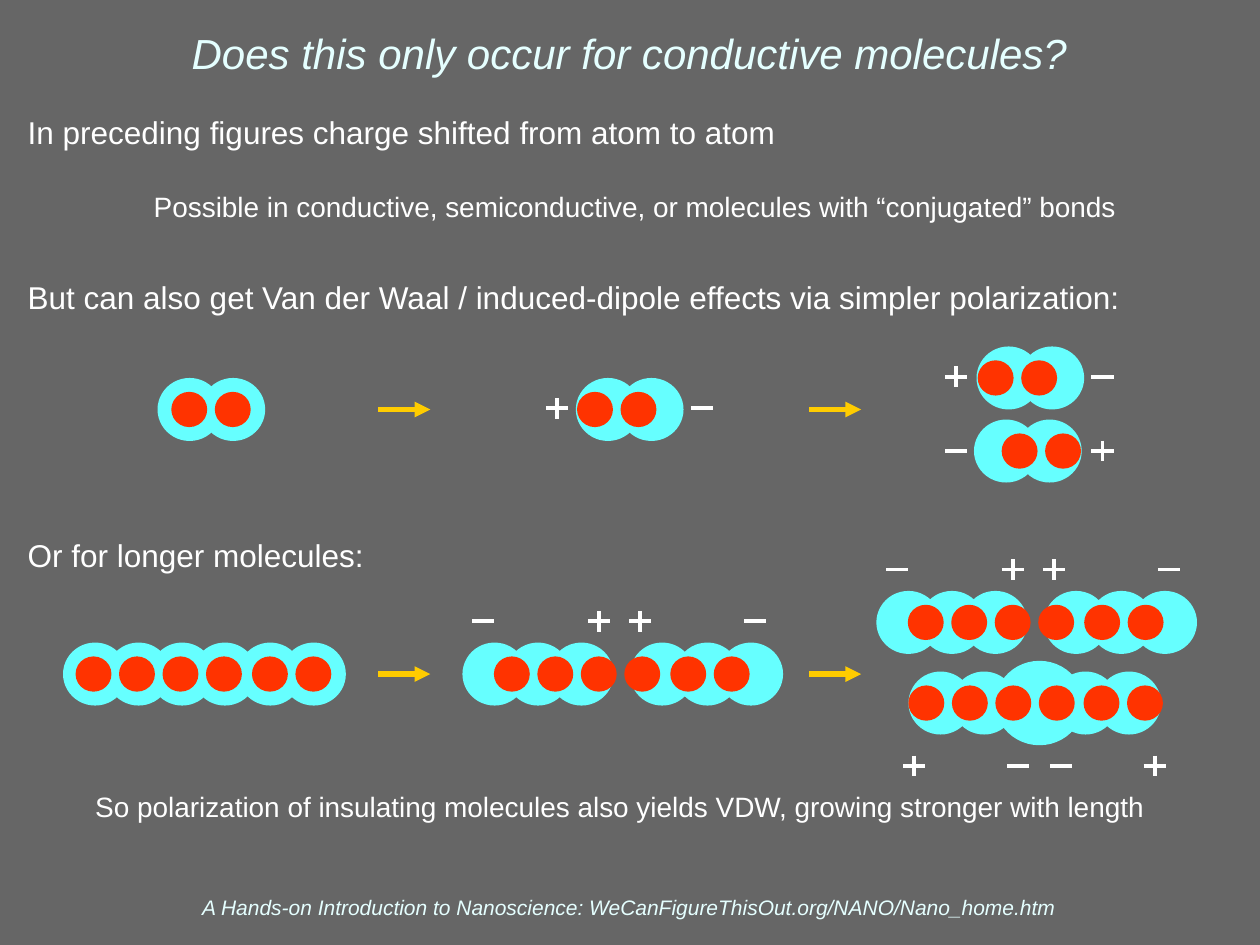
"""Draw a slide on induced dipoles in short and long insulating molecules."""
from dataclasses import dataclass

from lxml import etree
from pptx import Presentation
from pptx.dml import color
from pptx.enum import shapes, text
from pptx.oxml import ns
from pptx.util import Inches, Pt

HEX = {"back": "666666", "pale": "E5FFFF", "text": "FFFFFF",
       "cloud": "66FFFF", "core": "FF3300", "arrow": "FFCC00"}
COLS, ROWS = 100, 75
PITCH = 3.45
CLOUD, CORE, BULGE = (5.1, 5.0), (2.85, 2.8), (7.0, 6.7)
SIGN = (1.75, 1.65)
HEAD = {"size": Pt(24), "italic": True}
FOOT = {"size": Pt(12), "italic": True}

prs = Presentation()
prs.slide_width, prs.slide_height = Inches(10), Inches(7.5)
slide = prs.slides.add_slide(prs.slide_layouts[1])


@dataclass
class Line:
    """A body paragraph: words, point size, gap above, indent and alignment."""
    words: str
    size: int = 18
    gap: float = 0
    inset: float = 0
    align: int = text.PP_ALIGN.LEFT


@dataclass
class Chain:
    """A molecule: runs of (left, count) on a row, with charge signs."""
    row: float
    clouds: list
    cores: list
    plus: tuple = ()
    minus: tuple = ()
    level: float = 0
    bulge: tuple = ()


LINES = [
    Line("In preceding figures charge shifted from atom to atom"),
    Line("Possible in conductive, semiconductive, or molecules with “conjugated” bonds",
         16, 22, 1),
    Line("But can also get Van der Waal / induced-dipole effects via simpler polarization:",
         gap=31.5),
    Line("Or for longer molecules:", gap=125.5),
    Line("So polarization of insulating molecules also yields VDW, growing stronger with length",
         16, 123.5, align=text.PP_ALIGN.CENTER),
]


def pair(row: float, cloud: float, core: float, **signs) -> Chain:
    """Describe a molecule of two atoms."""
    return Chain(row, [(cloud, 2)], [(core, 2)], **signs)


def split(left: float, row: float) -> Chain:
    """Describe two long molecules whose facing ends are positive."""
    return Chain(row, [(left, 3), (left + 13.3, 1), (left + 16.9, 2)],
                 [(left + 2.5, 4), (left + 16.5, 2)],
                 (left + 10.85, left + 14.1), (left + 1.65, left + 23.25),
                 row - 4.2)


CHAINS = [
    pair(32.5, 12.5, 13.6),
    pair(32.5, 45.7, 45.8, plus=(44.2,), minus=(55.7,), level=32.4),
    pair(30, 77.5, 77.6, plus=(75.9,), minus=(87.5,), level=29.9),
    pair(35.8, 77.3, 79.5, plus=(87.5,), minus=(75.9,), level=35.8),
    Chain(53.5, [(5, 3), (15.3, 1), (18.9, 2)], [(6, 4), (20, 2)]),
    split(36.7, 53.5),
    split(69.55, 49.4),
    Chain(55.8, [(72.1, 2), (83.6, 2)], [(72.1, 4), (86, 2)],
          (72.55, 91.65), (80.8, 84.2), 60.8, (79,)),
]


def col(num: float) -> int:
    """Turn grid columns into a length."""
    return round(prs.slide_width * num / COLS)


def row(num: float) -> int:
    """Turn grid rows into a length."""
    return round(prs.slide_height * num / ROWS)


def tint(hue: str) -> color.RGBColor:
    """Look up a named colour."""
    return color.RGBColor.from_string(HEX[hue])


def style(item, form: dict) -> None:
    """Set each format value on an item."""
    for key, val in form.items():
        setattr(item, key, val)


def place(box, left: float, top: float, wide: float, high: float, anchor) -> None:
    """Move a text shape on the grid and set its frame."""
    style(box, {"left": col(left), "top": row(top),
                "width": col(wide), "height": row(high)})
    edge = Inches(0.05)
    style(box.text_frame, {
        "word_wrap": True, "auto_size": text.MSO_AUTO_SIZE.NONE,
        "vertical_anchor": anchor, "margin_left": edge, "margin_right": edge,
        "margin_top": edge, "margin_bottom": edge})


def write(para, words: str, hue: str, form: dict, align=text.PP_ALIGN.CENTER) -> None:
    """Fill a paragraph with one formatted run."""
    run = para.add_run()
    run.text = words
    style(run.font, {"name": "Arial", **form})
    run.font.color.rgb = tint(hue)
    para.alignment = align


def fill(frame, lines: list[Line]) -> None:
    """Write the body lines without bullets."""
    for num, line in enumerate(lines):
        para = frame.add_paragraph() if num else frame.paragraphs[0]
        prop = para._p.get_or_add_pPr()
        prop.set("marL", str(Inches(line.inset)))
        prop.set("indent", "0")
        etree.SubElement(prop, ns.qn("a:buNone"))
        style(para, {"space_before": Pt(line.gap), "space_after": Pt(0),
                     "line_spacing": 1.0})
        write(para, line.words, "text", {"size": Pt(line.size)}, line.align)


def disc(left: float, mid: float, size: tuple, hue: str) -> None:
    """Draw an ellipse centred on a row."""
    wide, high = size
    oval = slide.shapes.add_shape(shapes.MSO_SHAPE.OVAL, col(left),
                                  row(mid - high / 2), col(wide), row(high))
    oval.shadow.inherit = False
    oval.fill.solid()
    oval.fill.fore_color.rgb = tint(hue)
    oval.line.fill.background()


def rule(start: tuple, end: tuple, hue: str, width: float, head: bool = False) -> None:
    """Draw a straight line, with an arrowhead if asked."""
    wire = slide.shapes.add_connector(
        shapes.MSO_CONNECTOR.STRAIGHT,
        col(start[0]), row(start[1]), col(end[0]), row(end[1]))
    wire.line.color.rgb = tint(hue)
    wire.line.width = Pt(width)
    if head:
        etree.SubElement(wire.line._get_or_add_ln(), ns.qn("a:tailEnd"), type="triangle")
    etree.SubElement(wire._element.spPr, ns.qn("a:effectLst"))


def sign(mid: float, level: float, plus: bool) -> None:
    """Draw a plus or minus sign about its centre."""
    wide, high = SIGN[0] / 2, SIGN[1] / 2
    rule((mid - wide, level), (mid + wide, level), "text", 2.25)
    if plus:
        rule((mid, level - high), (mid, level + high), "text", 2.25)


def draw(chain: Chain) -> None:
    """Draw the clouds, the cores and the signs of a molecule."""
    for left in chain.bulge:
        disc(left, chain.row, BULGE, "cloud")
    for runs, size, hue in ((chain.clouds, CLOUD, "cloud"), (chain.cores, CORE, "core")):
        for left, count in runs:
            for num in range(count):
                disc(left + num * PITCH, chain.row, size, hue)
    for mids, plus in ((chain.plus, True), (chain.minus, False)):
        for mid in mids:
            sign(mid, chain.level, plus)


def main() -> None:
    """Build and save the slide."""
    slide.background.fill.solid()
    slide.background.fill.fore_color.rgb = tint("back")
    title, body = slide.placeholders
    place(title, 3.3, 0.8, 93.3, 6.7, text.MSO_ANCHOR.MIDDLE)
    write(title.text_frame.paragraphs[0],
          "Does this only occur for conductive molecules?", "pale", HEAD)
    place(body, 1.7, 8.5, 95, 64.5, text.MSO_ANCHOR.TOP)
    fill(body.text_frame, LINES)
    foot = slide.shapes.add_textbox(0, 0, 0, 0)
    place(foot, 3.3, 70.6, 93.3, 2.9, text.MSO_ANCHOR.BOTTOM)
    write(foot.text_frame.paragraphs[0],
          "A Hands-on Introduction to Nanoscience: "
          "WeCanFigureThisOut.org/NANO/Nano_home.htm", "pale", FOOT)
    for chain in CHAINS:
        draw(chain)
    for left in (30, 64.2):
        for level in (32.5, 53.5):
            rule((left, level), (left + 4.15, level), "arrow", 3, True)
    prs.save("out.pptx")


if __name__ == "__main__":
    main()
